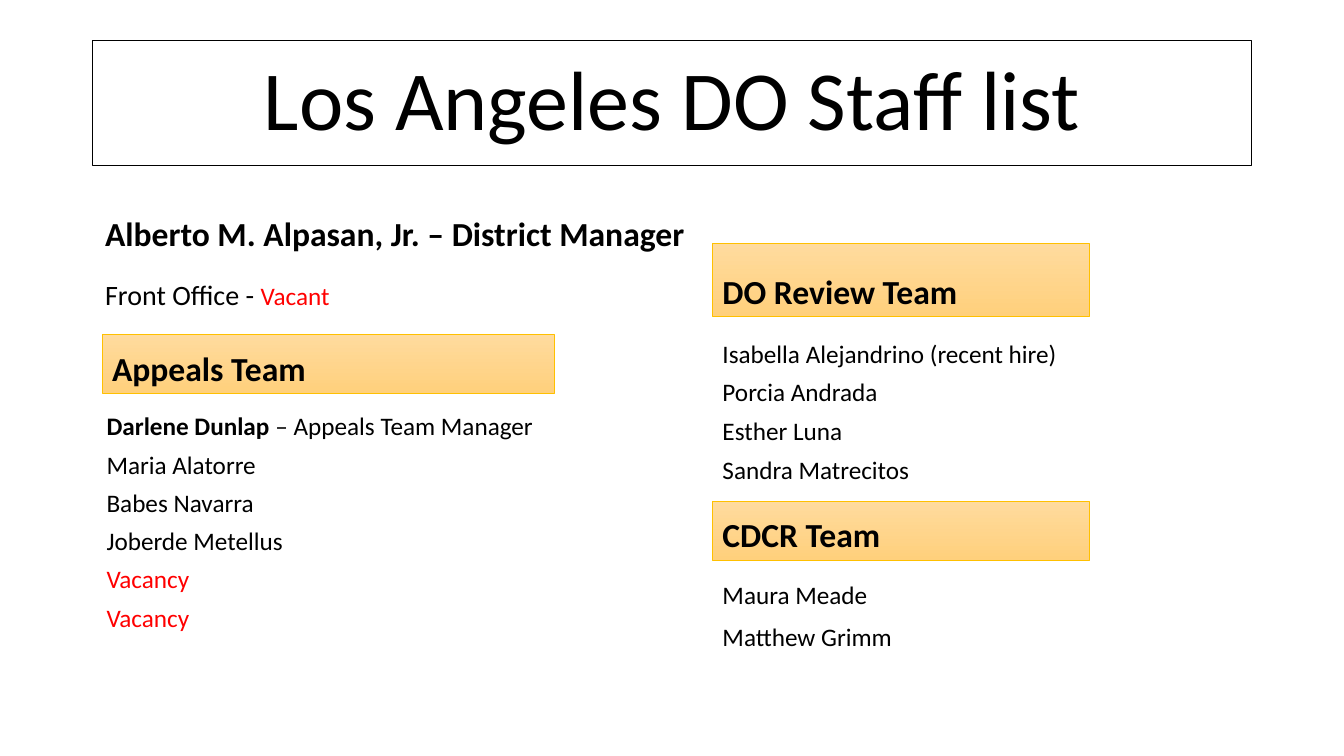
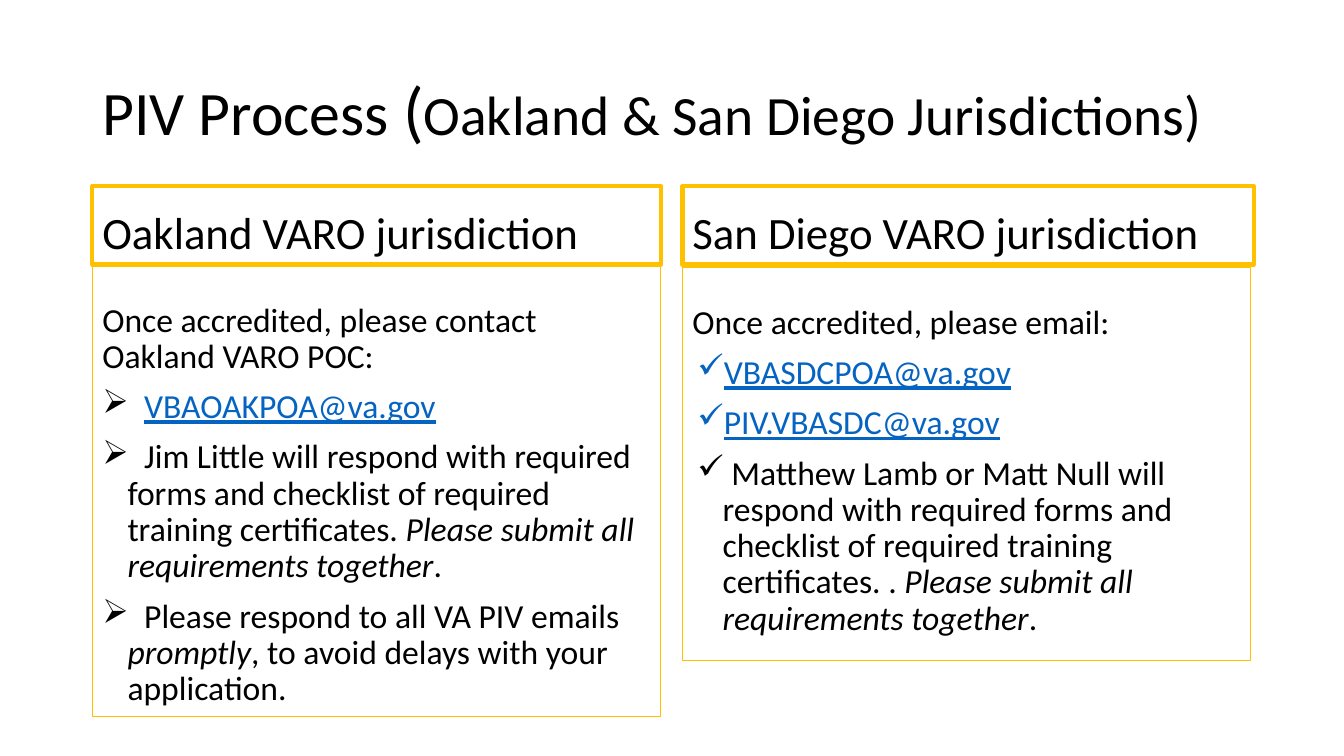
"""Build the Los Angeles staff list and PIV process slides."""
from lxml import etree
from pptx import Presentation
from pptx.dml import color
from pptx.enum import shapes, text
from pptx.oxml import ns
from pptx.util import Pt


class Theme:
    font = "Calibri"
    ink = color.RGBColor.from_string("000000")
    alert = color.RGBColor.from_string("FF0000")
    link = color.RGBColor.from_string("0563C1")
    gold = color.RGBColor.from_string("FFC000")
    band = [color.RGBColor.from_string(c) for c in ("FFDB9E", "FFD07C")]
    title, heading, jurisdiction, body, office, names = 60, 24, 32, 24, 20, 18


TOP, MIDDLE, BOTTOM = text.MSO_ANCHOR.TOP, text.MSO_ANCHOR.MIDDLE, text.MSO_ANCHOR.BOTTOM
LEFT, CENTER = text.PP_ALIGN.LEFT, text.PP_ALIGN.CENTER


def style(font, size=None, ink=None, **flags):
    if size:
        font.size = Pt(size)
    if ink is not None:
        font.color.rgb = ink
    for flag, value in flags.items():
        setattr(font, flag, value)


def add_panel(slide, frame, paragraphs, size, outline=None, weight=0.75, banded=False, anchor=TOP,
              align=LEFT, spacing=0.9, before=10, inset=3.6, bullet=None, hang=18, bold=None):
    box = [Pt(length) for length in frame]
    if outline is None:
        panel = slide.shapes.add_textbox(*box)
    else:
        panel = slide.shapes.add_shape(shapes.MSO_SHAPE.RECTANGLE, *box)
        panel.shadow.inherit = False
        panel.line.color.rgb = outline
        panel.line.width = Pt(weight)
        if banded:
            panel.fill.gradient()
            panel.fill.gradient_angle = 270
            for stop, shade in zip(panel.fill.gradient_stops, Theme.band):
                stop.color.rgb = shade
        else:
            panel.fill.background()
    frame_text = panel.text_frame
    frame_text.word_wrap = True
    frame_text.vertical_anchor = anchor
    frame_text.margin_top = Pt(inset)
    for index, runs in enumerate(paragraphs):
        paragraph = frame_text.paragraphs[0] if index == 0 else frame_text.add_paragraph()
        paragraph.alignment = align
        paragraph.line_spacing = spacing
        paragraph.space_before = Pt(before if index else 0)
        if bullet and index:
            properties = paragraph._p.get_or_add_pPr()
            properties.set("marL", str(Pt(hang)))
            properties.set("indent", str(-Pt(18)))
            etree.SubElement(properties, ns.qn("a:buChar")).set("char", bullet)
        style(paragraph.font, size, Theme.ink, name=Theme.font, bold=bold)
        for words, look in runs:
            run = paragraph.add_run()
            run.text = words
            style(paragraph.font if len(runs) == 1 else run.font, **look)
    return panel


plain, italic = {}, {"italic": True}
vacant = {"ink": Theme.alert}
email = {"ink": Theme.link, "underline": True}

deck = Presentation()
deck.slide_width, deck.slide_height = Pt(960), Pt(540)
blank = deck.slide_layouts[6]

staff = deck.slides.add_slide(blank)
add_panel(staff, (66, 29, 828, 89), [[("Los Angeles DO Staff list", plain)]], Theme.title,
          outline=Theme.ink, anchor=MIDDLE, align=CENTER)
add_panel(staff, (68, 143, 430, 42), [[("Alberto M. Alpasan, Jr. – District Manager", plain)]],
          Theme.heading, anchor=BOTTOM, bold=True)
add_panel(staff, (68, 184, 406, 42),
          [[("Front Office - ", plain), ("Vacant", {"size": Theme.names, **vacant})]],
          Theme.office, anchor=BOTTOM)

teams = [
    ("Appeals Team", (73, 239, 323, 42), (69, 294, 406, 170), 0.8, 10,
     [[("Darlene Dunlap ", {"bold": True}), ("– Appeals Team Manager", plain)],
      [("Maria Alatorre", plain)], [("Babes Navarra", plain)], [("Joberde Metellus", plain)],
      [("Vacancy", vacant)], [("Vacancy", vacant)]]),
    ("DO Review Team", (509, 174, 269, 52), (509, 238, 323, 125), 1.0, 6,
     [[("Isabella Alejandrino (recent hire)", plain)], [("Porcia Andrada", plain)],
      [("Esther Luna", plain)], [("Sandra Matrecitos", plain)]]),
    ("CDCR Team", (509, 358, 269, 42), (509, 413, 323, 65), 0.9, 10,
     [[("Maura Meade", plain)], [("Matthew Grimm", plain)]]),
]
for team, band_frame, names_frame, spacing, before, members in teams:
    add_panel(staff, band_frame, [[(team, plain)]], Theme.heading, outline=Theme.gold,
              weight=0.5, banded=True, anchor=BOTTOM, bold=True)
    add_panel(staff, names_frame, members, Theme.names, spacing=spacing, before=before)

process = deck.slides.add_slide(blank)
add_panel(process, (66, 29, 828, 104),
          [[("PIV Process ", {"size": 44.1}), ("(", {"size": 48.6}),
            ("Oakland & San Diego Jurisdictions)", {"size": 39.6})]], 44.1, anchor=MIDDLE)

together = [("Please submit all requirements together", italic), (".", plain)]
jurisdictions = [
    ("Oakland VARO jurisdiction", (66, 133, 406, 56), (66, 189.5, 406, 322), "➢", 18,
     [[("Once accredited, please contact Oakland VARO POC:", plain)],
      [(" ", plain), ("VBAOAKPOA@va.gov", email)],
      [(" ", plain), ("Jim Little will respond with required forms and checklist of required "
                      "training certificates. ", plain), *together],
      [(" ", plain), ("Please respond to all VA PIV emails ", plain), ("promptly", italic),
       (", to avoid delays with your application.", plain)]]),
    ("San Diego VARO jurisdiction", (487.5, 133, 408, 56), (487.5, 191, 406, 281), "✓", 21.6,
     [[("Once accredited, please email:", plain)],
      [("VBASDCPOA@va.gov", email)],
      [("PIV.VBASDC@va.gov", email)],
      [(" Matthew Lamb or Matt Null will respond with required forms and checklist of required "
        "training certificates. . ", plain), *together]]),
]
for office, heading_frame, steps_frame, mark, hang, steps in jurisdictions:
    add_panel(process, heading_frame, [[(office, plain)]], Theme.jurisdiction,
              outline=Theme.gold, weight=3, anchor=BOTTOM)
    panel = add_panel(process, steps_frame, steps, Theme.body, outline=Theme.gold, inset=27,
                      bullet=mark, hang=hang)
    for paragraph in panel.text_frame.paragraphs:
        for run in paragraph.runs:
            if run.text == " ":
                run._r.get_or_add_rPr().set("spc", "540")

deck.save("out.pptx")
